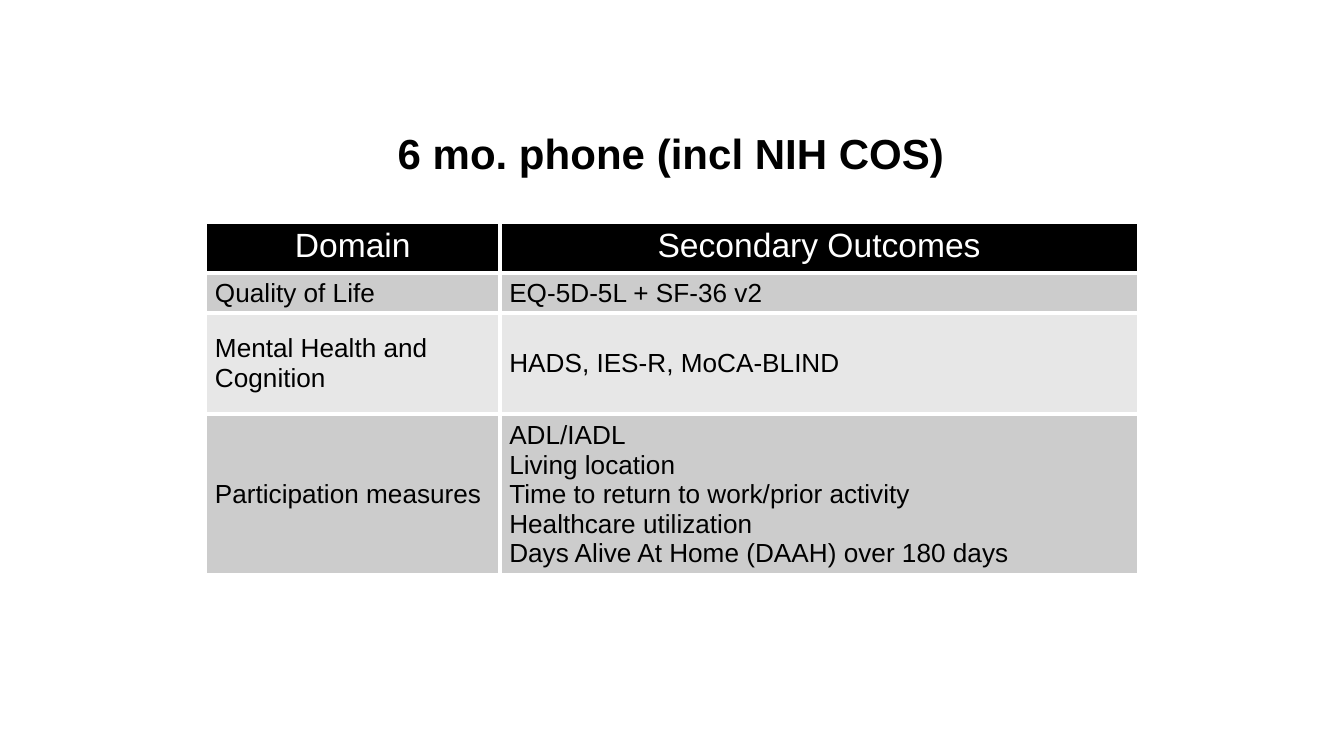
from lxml import etree
from pptx import Presentation
from pptx.dml.color import RGBColor
from pptx.enum.text import MSO_ANCHOR, MSO_AUTO_SIZE, PP_ALIGN
from pptx.oxml.ns import qn
from pptx.util import Inches, Pt

CENTER, LEFT = PP_ALIGN.CENTER, PP_ALIGN.LEFT
TOP, MIDDLE = MSO_ANCHOR.TOP, MSO_ANCHOR.MIDDLE
NO_AUTOFIT = MSO_AUTO_SIZE.NONE

FONT = "Arial"
BLACK = RGBColor(0x00, 0x00, 0x00)
WHITE = RGBColor(0xFF, 0xFF, 0xFF)
DARK_BAND = RGBColor(0xCC, 0xCC, 0xCC)
LIGHT_BAND = RGBColor(0xE7, 0xE7, 0xE7)

MARGIN_X, MARGIN_Y = Inches(0.07), Inches(0.04)
BORDER_WIDTH = Pt(2.25)
COLUMN_WIDTHS = [2.19, 4.75]
ROW_HEIGHTS = [0.38, 0.3, 0.75, 1.2]
OUTCOMES = [
    ("Domain", "Secondary Outcomes"),
    ("Quality of Life", "EQ-5D-5L + SF-36 v2"),
    ("Mental Health and Cognition", "HADS, IES-R, MoCA-BLIND"),
    ("Participation measures",
     "ADL/IADL\n"
     "Living location\n"
     "Time to return to work/prior activity\n"
     "Healthcare utilization\n"
     "Days Alive At Home (DAAH) over 180 days"),
]


def set_margins(area):
    area.margin_left = area.margin_right = MARGIN_X
    area.margin_top = area.margin_bottom = MARGIN_Y


def format_text(text_frame, size, color, align, bold=False):
    for paragraph in text_frame.paragraphs:
        paragraph.alignment = align
        for run in paragraph.runs:
            run.font.name = FONT
            run.font.size = Pt(size)
            run.font.bold = bold
            run.font.color.rgb = color


def add_borders(cell, color):
    properties = cell._tc.get_or_add_tcPr()
    for side in ("a:lnL", "a:lnR", "a:lnT", "a:lnB"):
        line = etree.SubElement(properties, qn(side), w=str(BORDER_WIDTH))
        fill = etree.SubElement(line, qn("a:solidFill"))
        etree.SubElement(fill, qn("a:srgbClr"), val=str(color))


def fill_cell(cell, text, row):
    header = row == 0
    cell.text_frame.text = text
    set_margins(cell)
    cell.vertical_anchor = TOP if header else MIDDLE
    add_borders(cell, WHITE)
    cell.fill.solid()
    if header:
        cell.fill.fore_color.rgb = BLACK
        format_text(cell.text_frame, 18, WHITE, CENTER)
    else:
        cell.fill.fore_color.rgb = DARK_BAND if row % 2 else LIGHT_BAND
        format_text(cell.text_frame, 14, BLACK, LEFT)


def add_title(slide, text):
    title = slide.shapes.title
    title.left, title.top = Inches(1.62), Inches(0.69)
    title.width, title.height = Inches(6.75), Inches(0.94)
    frame = title.text_frame
    frame.text = text
    frame.word_wrap = True
    frame.auto_size = NO_AUTOFIT
    frame.vertical_anchor = MIDDLE
    set_margins(frame)
    frame.paragraphs[0].line_spacing = 0.9
    format_text(frame, 22.5, BLACK, CENTER, bold=True)


def add_outcomes_table(slide):
    table = slide.shapes.add_table(
        len(ROW_HEIGHTS), len(COLUMN_WIDTHS), Inches(1.53), Inches(1.65),
        Inches(sum(COLUMN_WIDTHS)), Inches(sum(ROW_HEIGHTS))).table
    for column, width in zip(table.columns, COLUMN_WIDTHS):
        column.width = Inches(width)
    for row, height in zip(table.rows, ROW_HEIGHTS):
        row.height = Inches(height)
    for row, texts in enumerate(OUTCOMES):
        for column, text in enumerate(texts):
            fill_cell(table.cell(row, column), text, row)


def main():
    prs = Presentation()
    # Widescreen 16:9
    prs.slide_width = Inches(10)
    prs.slide_height = prs.slide_width * 9 // 16
    # Title Only layout
    slide = prs.slides.add_slide(prs.slide_layouts[5])
    add_title(slide, "6 mo. phone (incl NIH COS)")
    add_outcomes_table(slide)
    prs.save("out.pptx")


if __name__ == "__main__":
    main()
